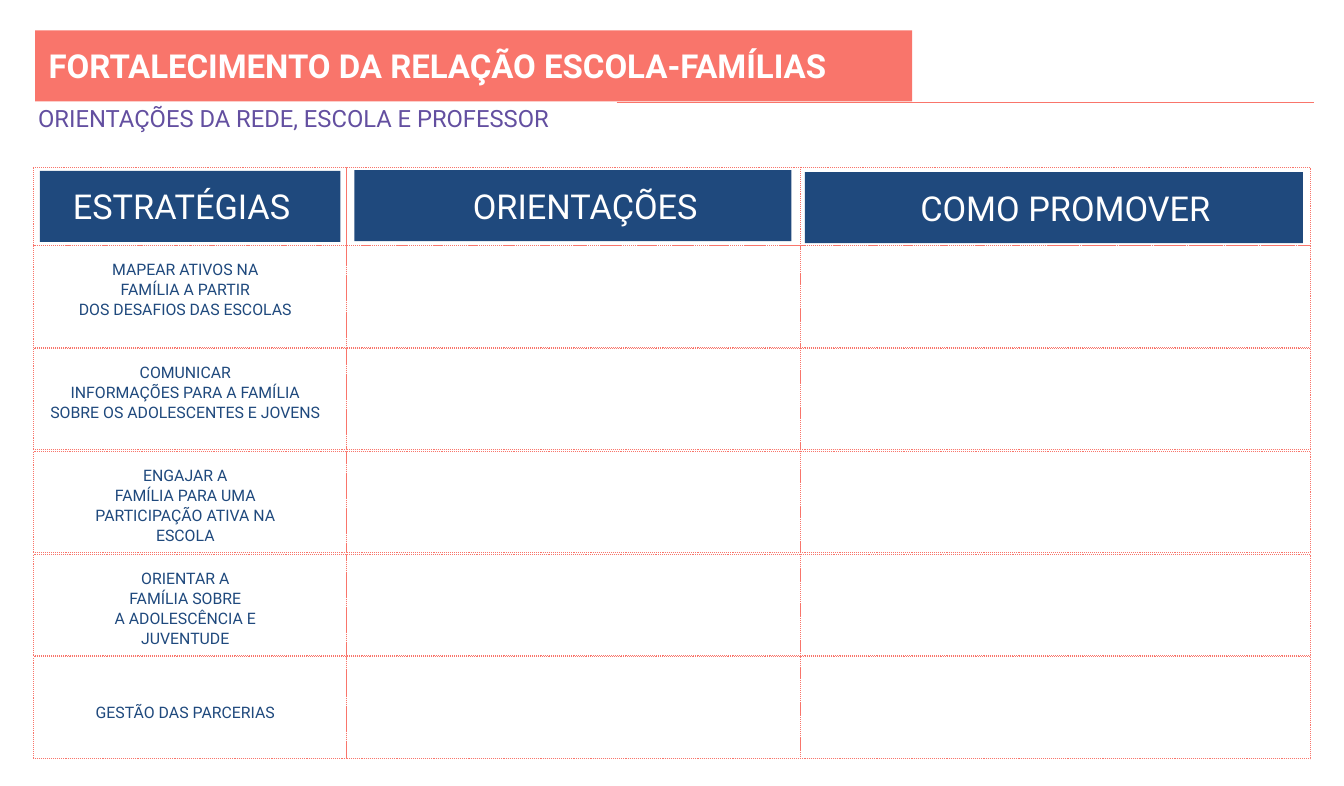
from dataclasses import dataclass

from lxml import etree
from pptx import Presentation
from pptx.dml.color import RGBColor
from pptx.enum import dml, shapes, text
from pptx.oxml import ns
from pptx.util import Cm, Pt


@dataclass(frozen=True)
class Theme:
    font: str = "Roboto"
    coral: RGBColor = RGBColor(0xF9, 0x75, 0x6B)
    navy: RGBColor = RGBColor(0x1F, 0x49, 0x7D)
    purple: RGBColor = RGBColor(0x63, 0x4F, 0xA0)
    white: RGBColor = RGBColor(0xFF, 0xFF, 0xFF)
    title_size: Pt = Pt(25)
    subtitle_size: Pt = Pt(18)
    header_size: Pt = Pt(26)
    body_size: Pt = Pt(12)
    line_width: Pt = Pt(0.75)


theme = Theme()


def write(box, words, size, color, bold=False, align=text.PP_ALIGN.CENTER,
          inset=0.38, spacing=1.06, left=0, first=0, right=0):
    """Fill a box with one paragraph; inset and indents are in centimetres."""
    frame = box.text_frame
    frame.word_wrap = True
    frame.auto_size = text.MSO_AUTO_SIZE.NONE
    frame.vertical_anchor = text.MSO_ANCHOR.TOP
    frame.margin_left = frame.margin_right = frame.margin_bottom = 0
    frame.margin_top = Cm(inset)
    para = frame.paragraphs[0]
    para.text = words
    para.alignment = align
    para.line_spacing = spacing
    for span in para.runs:
        span.font.name = theme.font
        span.font.size = size
        span.font.bold = bold
        span.font.color.rgb = color
    indents = para._p.get_or_add_pPr()
    for name, length in (("marL", left), ("marR", right), ("indent", first)):
        indents.set(name, str(int(Cm(length))))


def add_rectangle(left, top, width, height, fill=None):
    """Add a filled bar, or a dotted cell when no fill is given."""
    box = page.shapes.add_shape(shapes.MSO_SHAPE.RECTANGLE,
                                Cm(left), Cm(top), Cm(width), Cm(height))
    box.shadow.inherit = False
    if fill is None:
        box.fill.background()
        box.line.color.rgb = theme.coral
        box.line.width = theme.line_width
        box.line.dash_style = dml.MSO_LINE.ROUND_DOT
    else:
        box.fill.solid()
        box.fill.fore_color.rgb = fill
        box.line.fill.background()
    return box


deck = Presentation()
deck.slide_width, deck.slide_height = Cm(35.92), Cm(21.01)
page = deck.slides.add_slide(deck.slide_layouts[5])

# Title band, with the band behind the title
band = add_rectangle(0.94, 0.81, 23.44, 1.9, theme.coral)
title = page.shapes.title
title.left, title.top, title.width, title.height = Cm(1.27), Cm(1.19), Cm(25.53), Cm(1.75)
title.element.addprevious(band.element)
write(title, "FORTALECIMENTO DA RELAÇÃO ESCOLA-FAMÍLIAS", theme.title_size, theme.white,
      bold=True, align=text.PP_ALIGN.LEFT, inset=0.03, spacing=1.0, left=0.03)

subtitle = page.shapes.add_textbox(Cm(0.99), Cm(2.74), Cm(17.35), Cm(1.75))
write(subtitle, "ORIENTAÇÕES DA REDE, ESCOLA E PROFESSOR", theme.subtitle_size, theme.purple,
      align=text.PP_ALIGN.LEFT, inset=0.03, spacing=1.0, left=0.03)

rule = page.shapes.add_connector(shapes.MSO_CONNECTOR.STRAIGHT,
                                 Cm(16.48), Cm(2.74), Cm(35.13), Cm(2.74))
rule.line.color.rgb = theme.coral
rule.line.width = theme.line_width
etree.SubElement(rule.element.spPr, ns.qn("a:effectLst"))

# Grid of dotted cells
strategies = [
    "MAPEAR ATIVOS NA\nFAMÍLIA A PARTIR\nDOS DESAFIOS DAS ESCOLAS",
    "COMUNICAR\nINFORMAÇÕES PARA A FAMÍLIA SOBRE OS ADOLESCENTES E JOVENS",
    "ENGAJAR A\nFAMÍLIA PARA UMA\nPARTICIPAÇÃO ATIVA NA\nESCOLA",
    "ORIENTAR A\nFAMÍLIA SOBRE\nA ADOLESCÊNCIA E\nJUVENTUDE",
    "GESTÃO DAS PARCERIAS",
]
column_edges = [0.89, 9.27, 21.39, 35.03]
row_tops = [6.56 + 2.75 * row for row in range(len(strategies))]
for left, right in zip(column_edges, column_edges[1:]):
    add_rectangle(left, 4.47, right - left, 2.1)
    for top in row_tops:
        add_rectangle(left, top, right - left, 2.72)

# Column headers: bar position and width, then label position and width
wide_indent = dict(left=0.71, first=1.07, right=0.91)
headers = [
    ("ESTRATÉGIAS", (1.07, 4.57, 8.03), (1.27, 4.5, 7.54), dict(right=0.36)),
    ("ORIENTAÇÕES", (9.47, 4.55, 11.68), (9.37, 4.5, 11.68), wide_indent),
    ("COMO PROMOVER", (21.51, 4.6, 13.31), (21.39, 4.55, 13.31), wide_indent),
]
for words, bar, label, indents in headers:
    add_rectangle(*bar, 1.9, theme.navy)
    box = page.shapes.add_textbox(*map(Cm, label), Cm(1.2))
    write(box, words, theme.header_size, theme.white, **indents)

# Strategies in the first column; the single-line one sits lower in its cell
for top, words in zip(row_tops, strategies):
    drop = -0.03 if "\n" in words else 0.82
    box = page.shapes.add_textbox(Cm(0.51), Cm(top + drop), Cm(9.09), Cm(1.04))
    write(box, words, theme.body_size, theme.navy, left=0.71, right=0.91)

deck.save("out.pptx")
